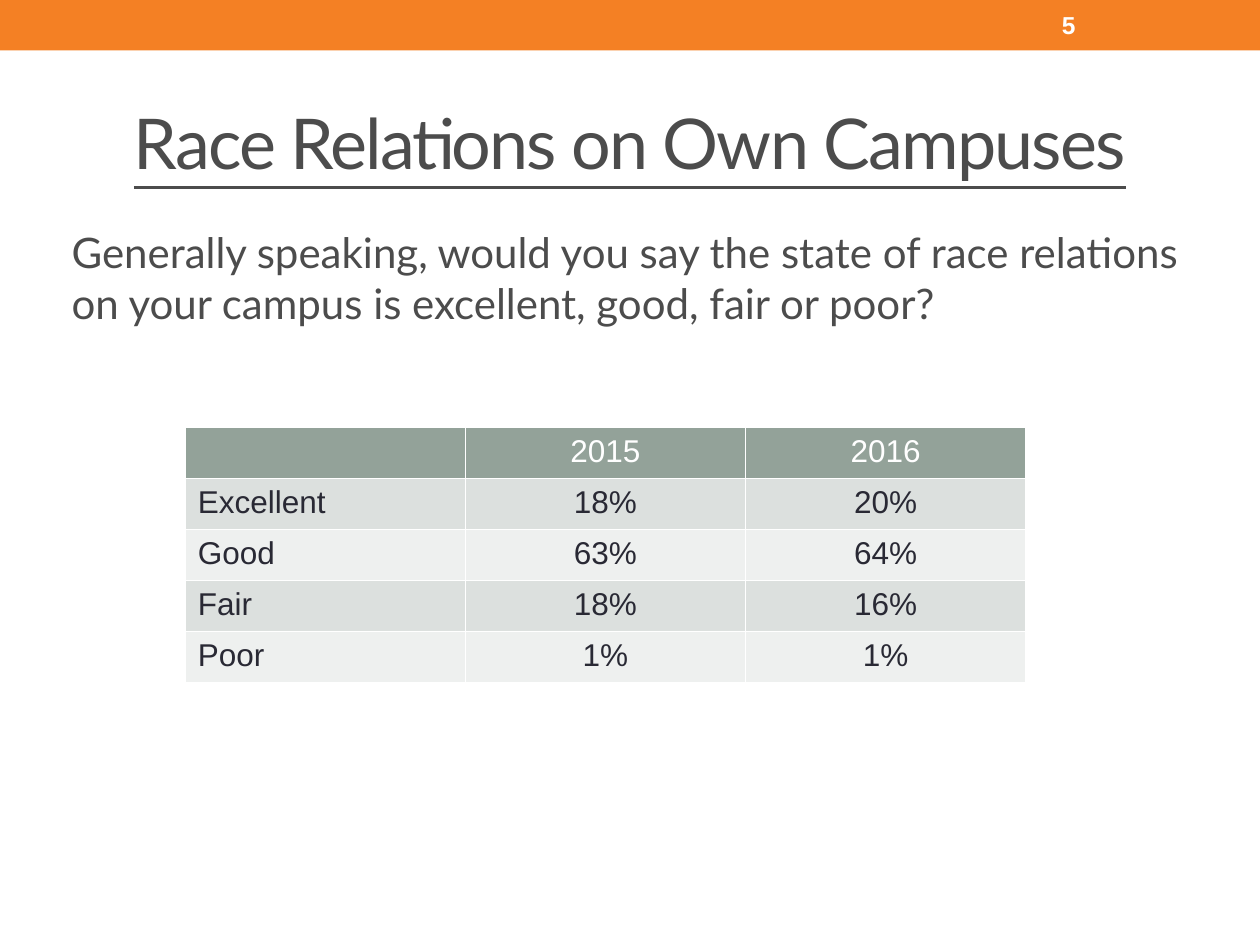
from lxml.etree import SubElement
from pptx import Presentation
from pptx.dml.color import RGBColor
from pptx.enum.shapes import MSO_SHAPE as Shape
from pptx.enum.text import MSO_ANCHOR as Anchor, MSO_AUTO_SIZE as AutoSize, PP_ALIGN as Align
from pptx.oxml.ns import qn
from pptx.util import Inches, Pt

COLORS = {
    "band": "F48024",
    "heading": "4C4C4C",
    "white": "FFFFFF",
    "header": "93A299",
    "odd_row": "DCE0DE",
    "even_row": "EEF0EF",
    "cell_text": "292934",
}
RATINGS = [
    ("", "2015", "2016"),
    ("Excellent", "18%", "20%"),
    ("Good", "63%", "64%"),
    ("Fair", "18%", "16%"),
    ("Poor", "1%", "1%"),
]


def color(name):
    return RGBColor.from_string(COLORS[name])


def write(frame, text, font, size, ink, align=Align.LEFT):
    """Set one paragraph of text and format it."""
    frame.text = text
    paragraph = frame.paragraphs[0]
    paragraph.alignment = align
    for run in paragraph.runs:
        run.font.name = font
        run.font.size = Pt(size)
        run.font.color.rgb = color(ink)
    return paragraph


def add_band(slide, width):
    band = slide.shapes.add_shape(Shape.RECTANGLE, 0, 0, width, Inches(0.4))
    band.shadow.inherit = False
    band.fill.solid()
    band.fill.fore_color.rgb = color("band")
    band.line.fill.background()


def set_title(slide, text):
    title = slide.shapes.title
    title.left, title.top = Inches(0.5), Inches(0.58)
    title.width, title.height = Inches(9), Inches(1.08)
    frame = title.text_frame
    frame.auto_size = AutoSize.NONE
    frame.vertical_anchor = Anchor.MIDDLE
    run = write(frame, text, "Lato", 40, "heading", Align.CENTER).runs[0]
    run.font.underline = True
    run.font._element.set("spc", "-100")  # tighter letter spacing


def add_text(slide, box, text, font, size, ink, anchor=Anchor.TOP):
    frame = slide.shapes.add_textbox(*map(Inches, box)).text_frame
    frame.word_wrap = True
    frame.vertical_anchor = anchor
    return write(frame, text, font, size, ink)


def add_borders(cell):
    """Draw thin white lines on all sides; they must precede the fill."""
    properties = cell._tc.get_or_add_tcPr()
    for side in ("a:lnL", "a:lnR", "a:lnT", "a:lnB"):
        line = SubElement(properties, qn(side), w=str(Pt(1)))
        fill = SubElement(line, qn("a:solidFill"))
        SubElement(fill, qn("a:srgbClr"), val=COLORS["white"])


def add_ratings_table(slide, rows):
    table = slide.shapes.add_table(
        len(rows), len(rows[0]),
        Inches(1.47), Inches(3.39), Inches(6.67), Inches(2.03),
    ).table
    for r, row in enumerate(rows):
        if r == 0:
            fill, ink = "header", "white"
        else:
            fill, ink = ("odd_row" if r % 2 else "even_row"), "cell_text"
        for c, text in enumerate(row):
            cell = table.cell(r, c)
            add_borders(cell)
            cell.fill.solid()
            cell.fill.fore_color.rgb = color(fill)
            paragraph = write(cell.text_frame, text, "Arial", 18, ink,
                              Align.CENTER if c else Align.LEFT)
            paragraph.font.size = Pt(18)
            for run in paragraph.runs:
                run.font.bold = False


def main():
    deck = Presentation()
    deck.slide_width, deck.slide_height = Inches(10), Inches(7.5)
    slide = deck.slides.add_slide(deck.slide_layouts[5])

    # Top band with the page number
    add_band(slide, deck.slide_width)
    number = add_text(slide, (8.33, 0.02, 1.17, 0.36), "5", "Arial", 14,
                      "white", Anchor.MIDDLE)
    number.runs[0].font.bold = True

    # Title and survey question
    set_title(slide, "Race Relations on Own Campuses")
    add_text(slide, (0.47, 1.75, 9, 5.33),
             "Generally speaking, would you say the state of race relations "
             "on your campus is excellent, good, fair or poor?",
             "Lato", 24, "heading")

    # Survey results
    add_ratings_table(slide, RATINGS)

    deck.save("out.pptx")


if __name__ == "__main__":
    main()
